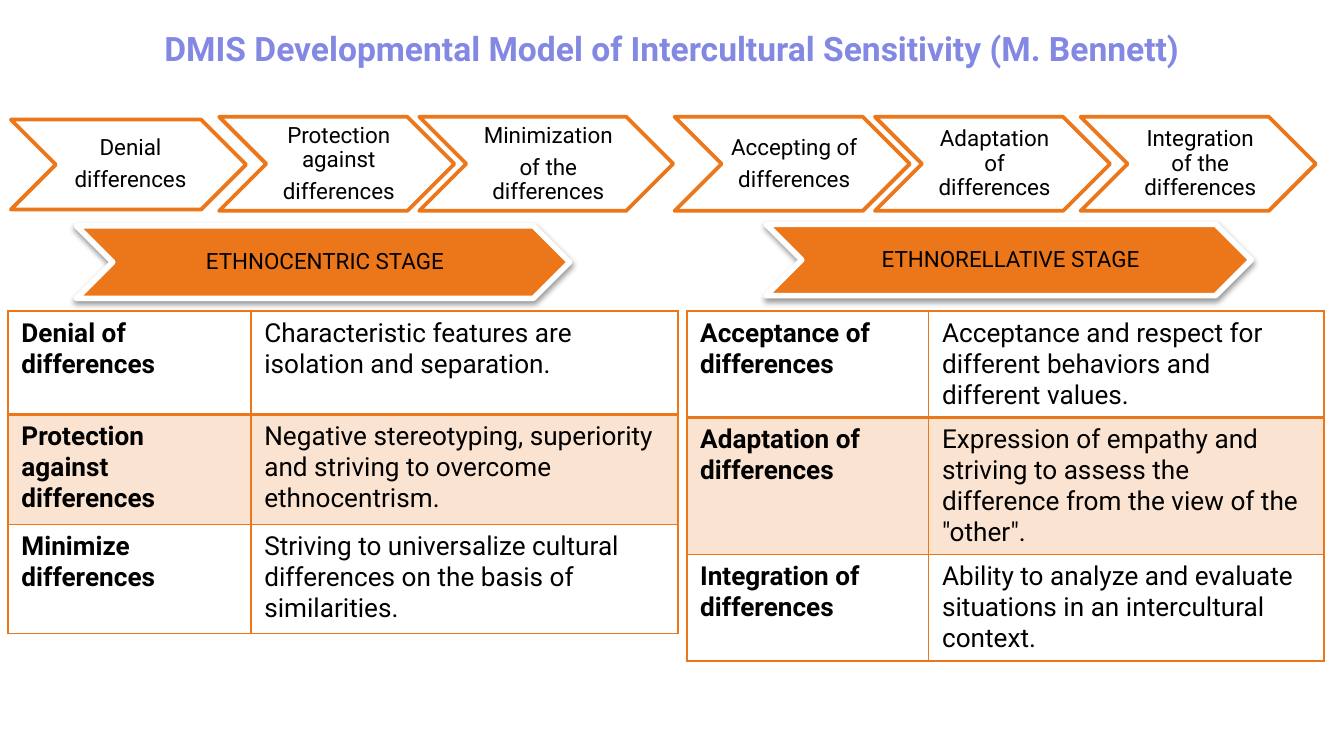
from dataclasses import dataclass

from lxml.etree import SubElement
from pptx import Presentation
from pptx.dml.color import RGBColor
from pptx.enum.shapes import MSO_SHAPE as Shape
from pptx.enum.text import MSO_ANCHOR as Anchor, PP_ALIGN as Align
from pptx.oxml.ns import qn
from pptx.util import Pt

COLORS = {"title": "8388E3", "accent": "EC771B", "text": "000000", "white": "FFFFFF"}
FONT = "Roboto"
BORDERS = ("lnL", "lnR", "lnT", "lnB")


@dataclass
class Chevron:
    text: str
    left: float
    top: float
    width: float
    height: float


@dataclass
class StageTable:
    left: float
    col_widths: tuple[float, float]
    row_heights: tuple[float, float, float]
    rows: list[tuple[str, str]]


STEP_TOP, STEP_WIDTH, STEP_HEIGHT = 62.6, 126, 50.4
STEPS = [
    Chevron("Denial\ndifferences", 5.8, 64.1, STEP_WIDTH, 48.2),
    Chevron("Protection against\ndifferences", 117.4, STEP_TOP, STEP_WIDTH, STEP_HEIGHT),
    Chevron("Minimization\nof the differences", 224.6, STEP_TOP, 136.1, STEP_HEIGHT),
    Chevron("Accepting of\ndifferences", 361.4, STEP_TOP, STEP_WIDTH, STEP_HEIGHT),
    Chevron("Adaptation of differences", 468.7, STEP_TOP, STEP_WIDTH, STEP_HEIGHT),
    Chevron("Integration of the differences", 578.9, STEP_TOP, STEP_WIDTH, STEP_HEIGHT),
]
STAGES = [
    Chevron("ETHNOCENTRIC STAGE", 41, 121, 264.2, 38.9),
    Chevron("ETHNORELLATIVE STAGE", 410.4, 120.2, 259.9, 38.2),
]
TABLE_TOP = 166.7
TABLES = [
    StageTable(4.3, (130.1, 228.9), (55.4, 59, 58.3), [
        ("Denial of differences", "Characteristic features are isolation and separation."),
        ("Protection against differences",
         "Negative stereotyping, superiority and striving to overcome ethnocentrism."),
        ("Minimize differences",
         "Striving to universalize cultural differences on the basis of similarities."),
    ]),
    StageTable(367.9, (129.6, 211.7), (57, 73.4, 57), [
        ("Acceptance of differences",
         "Acceptance and respect for different behaviors and different values."),
        ("Adaptation of differences",
         "Expression of empathy and striving to assess the difference from the view "
         "of the \"other\"."),
        ("Integration of differences",
         "Ability to analyze and evaluate situations in an intercultural context."),
    ]),
]


def rgb(name: str) -> RGBColor:
    return RGBColor.from_string(COLORS[name])


def write(tf, text: str, *, size: float, color: str = "text", bold: bool = False,
          align=Align.LEFT, line_spacing: float = 1.0, space_after: float = 0) -> None:
    """Fill a text frame, one paragraph per line of text."""
    tf.word_wrap = True
    for i, line in enumerate(text.split("\n")):
        p = tf.add_paragraph() if i else tf.paragraphs[0]
        p.alignment = align
        p.line_spacing = line_spacing
        p.space_before, p.space_after = Pt(0), Pt(space_after)
        r = p.add_run()
        r.text = line
        r.font.name, r.font.size, r.font.bold = FONT, Pt(size), bold
        r.font.color.rgb = rgb(color)


def add_chevron(shapes, item: Chevron, fill: str, line: str, line_width: float):
    sp = shapes.add_shape(Shape.CHEVRON, Pt(item.left), Pt(item.top),
                          Pt(item.width), Pt(item.height))
    sp.shadow.inherit = False
    sp.fill.solid()
    sp.fill.fore_color.rgb = rgb(fill)
    sp.line.color.rgb = rgb(line)
    sp.line.width = Pt(line_width)
    tf = sp.text_frame
    tf.vertical_anchor = Anchor.MIDDLE
    tf.margin_left = Pt(3.6)
    tf.margin_right = tf.margin_top = tf.margin_bottom = Pt(1.4)
    write(tf, item.text, size=12, align=Align.CENTER, line_spacing=0.9, space_after=4.2)
    return sp


def add_shadow(sp) -> None:
    effects = sp._element.spPr.find(qn("a:effectLst"))
    shadow = SubElement(effects, qn("a:outerShdw"), blurRad=str(Pt(3.1)),
                        dist=str(Pt(1.6)), dir="5400000", rotWithShape="0")
    color = SubElement(shadow, qn("a:srgbClr"), val=COLORS["text"])
    SubElement(color, qn("a:alpha"), val="38000")


def format_cell(cell, row: int) -> None:
    """Draw the borders, then tint the middle row."""
    props = cell._tc.get_or_add_tcPr()
    for side in BORDERS:
        heavy = (row == 0 and side == "lnB") or (row == 1 and side == "lnT")
        ln = SubElement(props, qn(f"a:{side}"), w=str(Pt(2 if heavy else 1)))
        fill = SubElement(ln, qn("a:solidFill"))
        SubElement(fill, qn("a:srgbClr"), val=COLORS["accent"])
    if row == 1:
        cell.fill.solid()
        cell.fill.fore_color.rgb = rgb("accent")
        color = props.find(qn("a:solidFill")).find(qn("a:srgbClr"))
        SubElement(color, qn("a:alpha"), val="20000")
    else:
        cell.fill.background()


def add_stage_table(s, spec: StageTable) -> None:
    table = s.shapes.add_table(len(spec.rows), 2, Pt(spec.left), Pt(TABLE_TOP),
                               Pt(sum(spec.col_widths)), Pt(sum(spec.row_heights))).table
    table.first_row = table.horz_banding = False
    for col, width in zip(table.columns, spec.col_widths):
        col.width = Pt(width)
    for i, (texts, height) in enumerate(zip(spec.rows, spec.row_heights)):
        table.rows[i].height = Pt(height)
        for j, text in enumerate(texts):
            cell = table.cell(i, j)
            format_cell(cell, i)
            write(cell.text_frame, text, size=14, bold=j == 0)


def main() -> None:
    prs = Presentation()
    prs.slide_width, prs.slide_height = Pt(720), Pt(405)
    s = prs.slides.add_slide(prs.slide_layouts[5])

    # Title
    title = s.shapes.title
    title.left, title.top, title.width, title.height = Pt(0), Pt(10), Pt(720), Pt(31)
    title.text_frame.vertical_anchor = Anchor.MIDDLE
    write(title.text_frame, "DMIS Developmental Model of Intercultural Sensitivity (M. Bennett)",
          size=18, color="title", bold=True, align=Align.CENTER)

    # Six steps in one group
    group = s.shapes.add_group_shape()
    for step in STEPS:
        add_chevron(group.shapes, step, "white", "accent", 2)

    # Two stages
    for stage in STAGES:
        add_shadow(add_chevron(s.shapes, stage, "accent", "white", 3))

    # Descriptions of the steps
    for table in TABLES:
        add_stage_table(s, table)

    prs.save("out.pptx")


if __name__ == "__main__":
    main()
